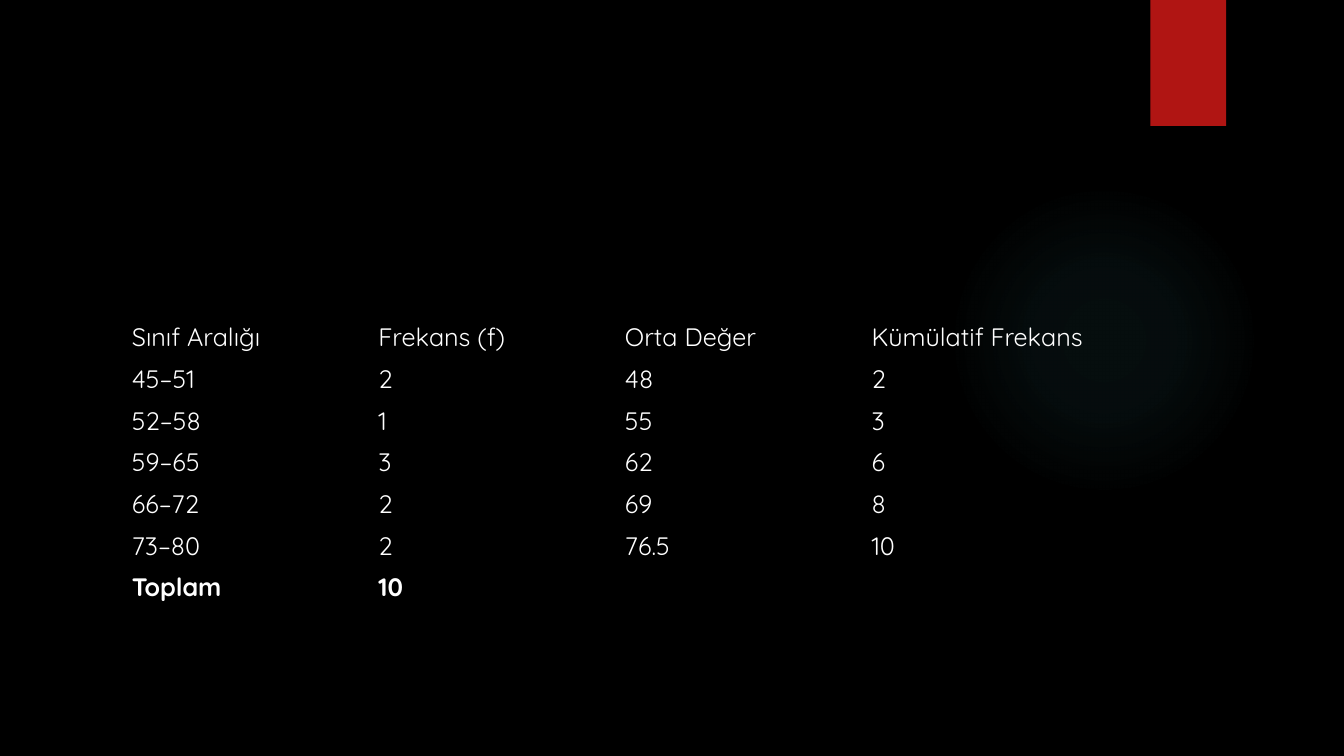
"""Build a slide with a grouped frequency table on a black background."""
import lxml.etree
import pptx
import pptx.dml.color
import pptx.enum.shapes
import pptx.enum.text
import pptx.oxml.ns
import pptx.util

Pt = pptx.util.Pt
COLORS = {"background": "000000", "text": "FFFFFF", "ribbon": "B01513", "glow": "50B9C1"}
FONT = "Quicksand"
NO_GRID_STYLE = "{2D5ABB26-0587-4C30-8999-92F81FD0307C}"
GLOW_STOPS = [(0, 7), (36, 6), (69, 0)]
FREQUENCIES = [
    ["Sınıf Aralığı", "Frekans (f)", "Orta Değer", "Kümülatif Frekans"],
    ["45–51", "2", "48", "2"],
    ["52–58", "1", "55", "3"],
    ["59–65", "3", "62", "6"],
    ["66–72", "2", "69", "8"],
    ["73–80", "2", "76.5", "10"],
    ["Toplam", "10", "", ""],
]


def color(name):
    """Return the named colour as an RGB value."""
    return pptx.dml.color.RGBColor.from_string(COLORS[name])


def add_plain_shape(slide, kind, left, top, width, height):
    """Add a preset shape without line or shadow."""
    shape = slide.shapes.add_shape(kind, Pt(left), Pt(top), Pt(width), Pt(height))
    shape.shadow.inherit = False
    shape.line.fill.background()
    return shape


def add_glow(slide, left, top, diameter):
    """Add a circle that fades out from its centre."""
    glow = add_plain_shape(slide, pptx.enum.shapes.MSO_SHAPE.OVAL, left, top, diameter, diameter)
    glow.fill.background()
    qn = pptx.oxml.ns.qn
    gradient = lxml.etree.Element(qn("a:gradFill"), rotWithShape="1")
    stops = lxml.etree.SubElement(gradient, qn("a:gsLst"))
    for position, opacity in GLOW_STOPS:
        stop = lxml.etree.SubElement(stops, qn("a:gs"), pos=str(position * 1000))
        tint = lxml.etree.SubElement(stop, qn("a:srgbClr"), val=COLORS["glow"])
        lxml.etree.SubElement(tint, qn("a:alpha"), val=str(opacity * 1000))
    circle = lxml.etree.SubElement(gradient, qn("a:path"), path="circle")
    lxml.etree.SubElement(circle, qn("a:fillToRect"), l="50000", t="50000", r="50000", b="50000")
    properties = glow.element.spPr
    properties.replace(properties.find(qn("a:noFill")), gradient)


def add_ribbon(slide, left, top, width, height):
    """Add the solid ribbon at the top edge."""
    ribbon = add_plain_shape(slide, pptx.enum.shapes.MSO_SHAPE.RECTANGLE, left, top, width, height)
    ribbon.fill.solid()
    ribbon.fill.fore_color.rgb = color("ribbon")


def fill_cell(cell, text, bold):
    """Write one cell on a clear ground."""
    cell.fill.background()
    cell.vertical_anchor = pptx.enum.text.MSO_ANCHOR.MIDDLE
    cell.text_frame.text = text
    font = cell.text_frame.paragraphs[0].font
    font.size = Pt(18)
    for run in cell.text_frame.paragraphs[0].runs:
        run.font.name = FONT
        run.font.size = Pt(18)
        run.font.bold = bold
        run.font.color.rgb = color("text")


def add_frequency_table(slide, left, top, width, height):
    """Add the table with equal columns and a bold total row."""
    frame = slide.shapes.add_table(
        len(FREQUENCIES), len(FREQUENCIES[0]), Pt(left), Pt(top), Pt(width), Pt(height))
    table = frame.table
    table.first_row = False
    table.horz_banding = False
    style = frame.element.find(".//" + pptx.oxml.ns.qn("a:tableStyleId"))
    style.text = NO_GRID_STYLE
    for row, values in enumerate(FREQUENCIES):
        for column, value in enumerate(values):
            fill_cell(table.cell(row, column), value, row == len(FREQUENCIES) - 1)


def main():
    """Build and save the slide."""
    deck = pptx.Presentation()
    deck.slide_width, deck.slide_height = Pt(960), Pt(540)
    slide = deck.slides.add_slide(deck.slide_layouts[6])
    slide.background.fill.solid()
    slide.background.fill.fore_color.rgb = color("background")
    add_glow(slide, 677.5, 132, 222)
    add_ribbon(slide, 821.75, 0, 54, 90)
    add_frequency_table(slide, 87, 226, 704.5, 201.6)
    deck.save("out.pptx")


if __name__ == "__main__":
    main()
